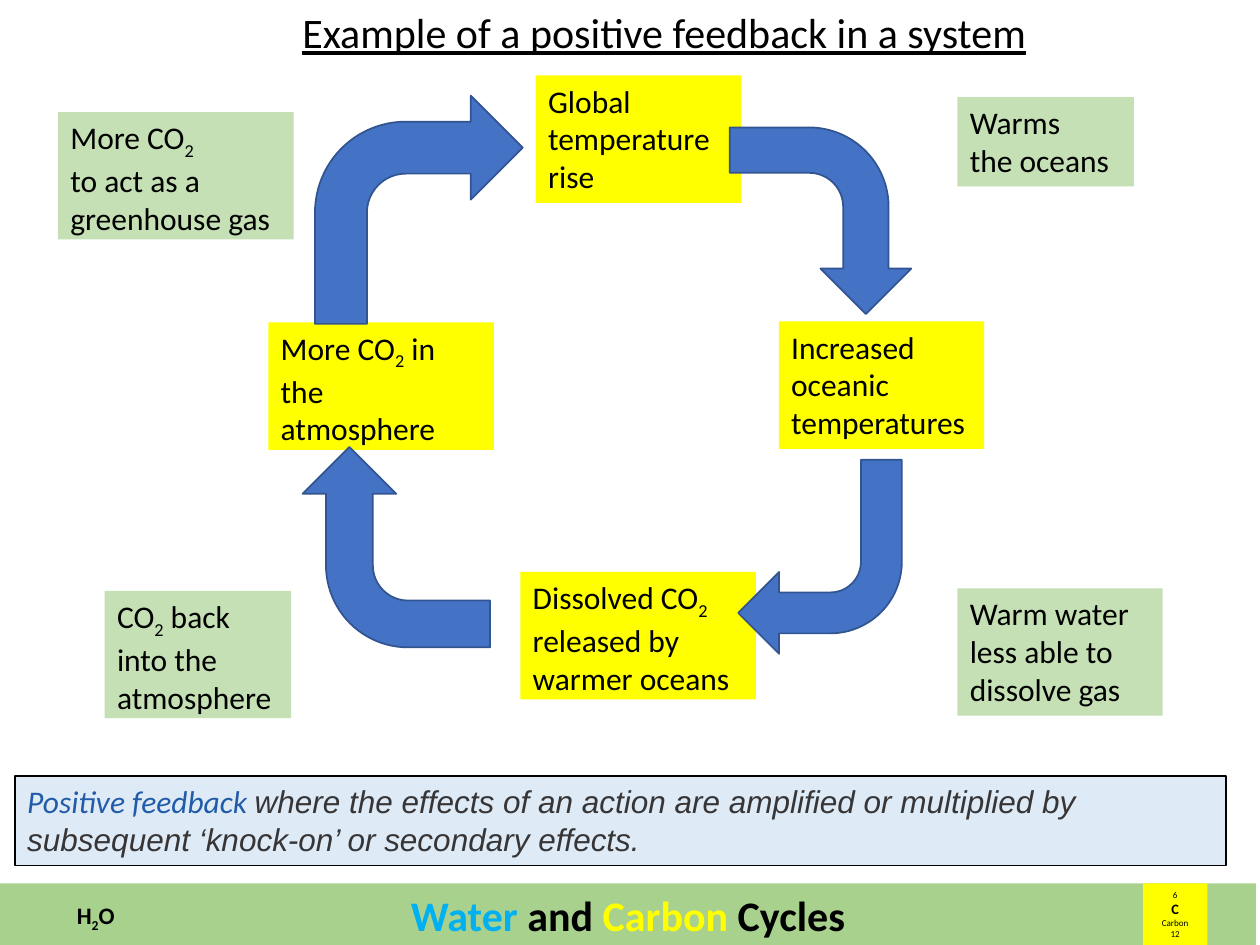
"""Build a slide showing a positive feedback loop between carbon dioxide and ocean warming."""
from dataclasses import dataclass

import pptx
import pptx.dml.color
import pptx.enum.shapes
import pptx.enum.text
import pptx.util
from pptx.util import Cm

SHAPES = pptx.enum.shapes.MSO_SHAPE
ALIGN = pptx.enum.text.PP_ALIGN
ANCHOR = pptx.enum.text.MSO_ANCHOR


@dataclass(frozen=True)
class Theme:
    """Colours, fonts and type sizes of the slide."""
    font: str = "Calibri"
    quote_font: str = "Arial"
    black: str = "000000"
    yellow: str = "FFFF00"
    water: str = "00B0F0"
    stage: str = "FFFF00"
    process: str = "C5E0B4"
    banner: str = "A9D18E"
    arrow: str = "4472C4"
    arrow_edge: str = "325491"
    panel: str = "DEEBF7"
    term: str = "225CA8"
    quote: str = "373536"
    heading_size: float = 24
    body_size: float = 18
    formula_size: float = 13.5
    symbol_size: float = 8.2
    tile_size: float = 5.2


THEME = Theme()


@dataclass(frozen=True)
class Frame:
    """Position and size in centimetres."""
    left: float
    top: float
    width: float
    height: float = 2.57

    def lengths(self) -> tuple:
        """Return the four lengths for python-pptx."""
        return Cm(self.left), Cm(self.top), Cm(self.width), Cm(self.height)


@dataclass(frozen=True)
class Label:
    """A filled box with one paragraph per line."""
    frame: Frame
    fill: str
    lines: tuple


@dataclass(frozen=True)
class Arrow:
    """A bent arrow turned clockwise by some degrees."""
    frame: Frame
    rotation: int


LABELS = (
    Label(Frame(1.17, 2.26, 4.75), THEME.process, ("More CO_2", "to act as a", "greenhouse gas")),
    Label(Frame(10.8, 1.52, 4.14), THEME.stage, ("Global", "temperature", "rise")),
    Label(Frame(19.3, 1.96, 3.56, 1.8), THEME.process, ("Warms", "the oceans")),
    Label(Frame(15.7, 6.48, 4.14), THEME.stage, ("Increased", "oceanic", "temperatures")),
    Label(Frame(19.3, 11.86, 4.14), THEME.process, ("Warm water", "less able to", "dissolve gas")),
    Label(Frame(10.49, 11.53, 4.75), THEME.stage, ("Dissolved CO_2", "released by", "warmer oceans")),
    Label(Frame(2.11, 11.91, 3.76), THEME.process, ("CO_2_ back", "into the", "atmosphere")),
    Label(Frame(5.41, 6.5, 4.55), THEME.stage, ("More CO_2_ in", "the atmosphere")),
)

ARROWS = (
    Arrow(Frame(6.35, 1.93, 4.19, 4.6), 0),
    Arrow(Frame(14.66, 2.62, 3.76, 3.66), 90),
    Arrow(Frame(14.88, 9.27, 3.3, 3.91), 180),
    Arrow(Frame(5.97, 9.14, 4.04, 3.78), 270),
)


def write(para, text: str, *, size: float = THEME.body_size, color: str = THEME.black,
          font: str = THEME.font, bold: bool = False, italic: bool = False,
          underline: bool = False) -> None:
    """Add formatted text to a paragraph, with subscripts between underscores."""
    for index, piece in enumerate(text.split("_")):
        if not piece:
            continue
        span = para.add_run()
        span.text = piece
        span.font.size = pptx.util.Pt(size)
        span.font.name = font
        span.font.bold = bold
        span.font.italic = italic
        span.font.underline = underline
        span.font.color.rgb = pptx.dml.color.RGBColor.from_string(color)
        if index % 2:
            span.font._element.set("baseline", "-25000")


def add_box(page, frame: Frame, fill: str, edge: str | None = None,
            kind=SHAPES.RECTANGLE):
    """Add a flat filled shape whose text starts at the top left."""
    box = page.shapes.add_shape(kind, *frame.lengths())
    box.shadow.inherit = False
    box.fill.solid()
    box.fill.fore_color.rgb = pptx.dml.color.RGBColor.from_string(fill)
    if edge:
        box.line.color.rgb = pptx.dml.color.RGBColor.from_string(edge)
        box.line.width = pptx.util.Pt(1)
    else:
        box.line.fill.background()
    box.text_frame.word_wrap = True
    box.text_frame.vertical_anchor = ANCHOR.TOP
    box.text_frame.paragraphs[0].alignment = ALIGN.LEFT
    return box


def next_para(box, index: int, alignment):
    """Return the first paragraph of a box or append another, aligned."""
    para = box.text_frame.add_paragraph() if index else box.text_frame.paragraphs[0]
    para.alignment = alignment
    return para


def add_label(page, label: Label) -> None:
    """Draw one stage or process of the loop."""
    box = add_box(page, label.frame, label.fill)
    for index, line in enumerate(label.lines):
        write(next_para(box, index, ALIGN.LEFT), line)


def add_arrow(page, arrow: Arrow) -> None:
    """Draw one bent arrow of the loop."""
    box = add_box(page, arrow.frame, THEME.arrow, THEME.arrow_edge, SHAPES.BENT_ARROW)
    box.rotation = arrow.rotation


def add_footer(page) -> None:
    """Draw the course banner with its water formula and carbon tile."""
    banner = add_box(page, Frame(0, 17.81, 25.32, 1.27), THEME.banner)
    para = next_para(banner, 0, ALIGN.CENTER)
    for text, color in (("Water", THEME.water), (" and ", THEME.black),
                        ("Carbon", THEME.yellow), (" Cycles", THEME.black)):
        write(para, text, size=THEME.heading_size, color=color, bold=True)

    tile = add_box(page, Frame(23.04, 17.81, 1.3, 1.27), THEME.yellow)
    for index, text in enumerate(("6", "C", "Carbon", "12")):
        symbol = text == "C"
        write(next_para(tile, index, ALIGN.CENTER), text, bold=symbol,
              size=THEME.symbol_size if symbol else THEME.tile_size)

    formula = page.shapes.add_textbox(*Frame(1.3, 18.03, 1.32, 0.84).lengths())
    write(formula.text_frame.paragraphs[0], "H_2_O", size=THEME.formula_size, bold=True)


def add_title(page, text: str) -> None:
    """Fill the title placeholder."""
    title = page.shapes.title
    title.left, title.top, title.width, title.height = Frame(5.84, 0, 15.24, 1.27).lengths()
    title.text_frame.word_wrap = False
    title.text_frame.auto_size = pptx.enum.text.MSO_AUTO_SIZE.NONE
    title.text_frame.vertical_anchor = ANCHOR.TOP
    write(next_para(title, 0, ALIGN.LEFT), text, size=THEME.heading_size, underline=True)


def add_definition(page) -> None:
    """Draw the panel that defines positive feedback."""
    panel = add_box(page, Frame(0.3, 15.65, 24.41, 1.8), THEME.panel, THEME.black)
    para = panel.text_frame.paragraphs[0]
    write(para, "Positive feedback ", color=THEME.term, italic=True)
    write(para, "where the effects of an action are amplified or multiplied by "
          "subsequent ‘knock-on’ or secondary effects.",
          color=THEME.quote, font=THEME.quote_font, italic=True)


def main() -> None:
    """Assemble and save the deck."""
    deck = pptx.Presentation()
    deck.slide_width, deck.slide_height = Cm(25.4), Cm(19.05)
    page = deck.slides.add_slide(deck.slide_layouts.get_by_name("Title Only"))
    add_footer(page)
    for label in LABELS:
        add_label(page, label)
    for arrow in ARROWS:
        add_arrow(page, arrow)
    add_title(page, "Example of a positive feedback in a system")
    add_definition(page)
    deck.save("out.pptx")


if __name__ == "__main__":
    main()
